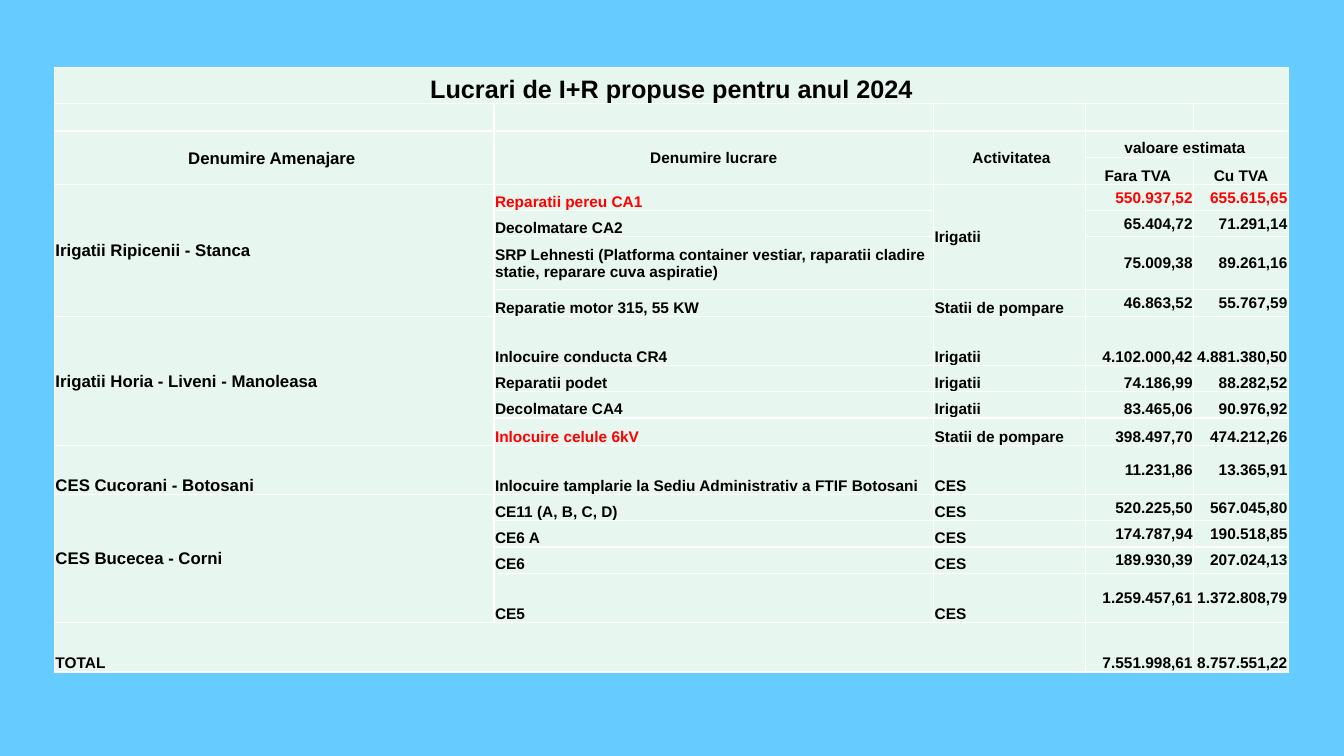
from lxml.etree import SubElement
from pptx import Presentation
from pptx.dml.color import RGBColor
from pptx.enum.text import MSO_ANCHOR as Anchor, PP_ALIGN as Align
from pptx.oxml.ns import qn
from pptx.util import Inches, Pt

SKY = RGBColor(0x66, 0xCC, 0xFF)
MINT = RGBColor(0xE7, 0xF6, 0xEF)
WHITE = RGBColor(0xFF, 0xFF, 0xFF)
BLACK = RGBColor(0, 0, 0)
RED = RGBColor(0xFF, 0, 0)
MID, LOW = Anchor.MIDDLE, Anchor.BOTTOM

TITLE = "Lucrari de I+R propuse pentru anul 2024"
# Heading: text, size
HEADS = [("Denumire Amenajare ", 12), ("Denumire lucrare", 11), (" Activitatea", 11)]
VALUE = "valoare estimata "
TAXES = ["Fara TVA ", "Cu TVA"]
# Site, anchor of its name, anchor of its values, works
SITES = [
    ("Irigatii Ripicenii - Stanca", MID, MID, [
        ("Reparatii pereu CA1", "Irigatii", "550.937,52", "655.615,65"),
        ("Decolmatare CA2", "", "65.404,72", "71.291,14"),
        ("SRP Lehnesti (Platforma container vestiar, raparatii cladire statie, "
         "reparare cuva aspiratie)", "", "75.009,38", "89.261,16"),
        ("Reparatie motor 315, 55 KW", "Statii de pompare", "46.863,52", "55.767,59")]),
    ("Irigatii Horia - Liveni - Manoleasa", MID, LOW, [
        ("Inlocuire conducta CR4", "Irigatii", "4.102.000,42", "4.881.380,50"),
        ("Reparatii podet", "Irigatii", "74.186,99", "88.282,52"),
        ("Decolmatare CA4", "Irigatii", "83.465,06", "90.976,92"),
        ("Inlocuire celule 6kV", "Statii de pompare", "398.497,70", "474.212,26")]),
    ("CES Cucorani - Botosani", LOW, MID, [
        ("Inlocuire tamplarie la Sediu Administrativ a FTIF Botosani", "CES",
         "11.231,86", "13.365,91")]),
    ("CES Bucecea - Corni", MID, MID, [
        ("CE11 (A, B, C, D)", "CES", "520.225,50", "567.045,80"),
        ("CE6 A", "CES", "174.787,94", "190.518,85"),
        ("CE6", "CES", "189.930,39", "207.024,13"),
        ("CE5", "CES", "1.259.457,61", "1.372.808,79")]),
]
TOTAL = ("TOTAL", "7.551.998,61", "8.757.551,22")
REDS = {"Reparatii pereu CA1", "550.937,52", "655.615,65", "Inlocuire celule 6kV"}
COLS = [4.36, 4.36, 1.51, 1.07, 0.94]
ROWS = [0.36, 0.27, 0.26, 0.27, 0.26, 0.26, 0.52, 0.27, 0.49,
        0.26, 0.26, 0.27, 0.49, 0.26, 0.26, 0.26, 0.49, 0.49]

deck = Presentation()
deck.slide_width, deck.slide_height = Inches(13.33), Inches(7.5)
slide = deck.slides.add_slide(deck.slide_layouts[6])
slide.background.fill.solid()
slide.background.fill.fore_color.rgb = SKY

table = slide.shapes.add_table(len(ROWS), len(COLS), Inches(0.54), Inches(0.67),
                               Inches(sum(COLS)), Inches(sum(ROWS))).table
table.first_row = table.horz_banding = False
for col, width in zip(table.columns, COLS):
    col.width = Inches(width)
for row, height in zip(table.rows, ROWS):
    row.height = Inches(height)


def style(cell):
    """Give a cell its white borders, fill, margins and a small blank line."""
    props = cell._tc.get_or_add_tcPr()
    for side in ("lnL", "lnR", "lnT", "lnB"):
        line = SubElement(props, qn(f"a:{side}"), w=str(Pt(1)))
        SubElement(SubElement(line, qn("a:solidFill")), qn("a:srgbClr"), val=str(WHITE))
    cell.fill.solid()
    cell.fill.fore_color.rgb = MINT
    cell.margin_left = cell.margin_right = cell.margin_top = Inches(0.01)
    cell.margin_bottom = 0
    SubElement(cell.text_frame.paragraphs[0]._p, qn("a:endParaRPr"), sz="1100")


def put(row, col, text, size=11, align=Align.LEFT, anchor=LOW, span=(1, 1)):
    cell = table.cell(row, col)
    if span != (1, 1):
        cell.merge(table.cell(row + span[0] - 1, col + span[1] - 1))
    cell.vertical_anchor = anchor
    para = cell.text_frame.paragraphs[0]
    para.alignment = align
    run = para.add_run()
    run.text = text
    font = run.font
    font.name, font.size, font.bold = "Arial", Pt(size), True
    font.color.rgb = RED if text in REDS else BLACK


for cell in table.iter_cells():
    style(cell)

put(0, 0, TITLE, size=18, align=Align.CENTER, span=(1, 5))
for col, (text, size) in enumerate(HEADS):
    put(2, col, text, size=size, align=Align.CENTER, anchor=MID, span=(2, 1))
put(2, 3, VALUE, align=Align.CENTER, span=(1, 2))
for col, text in enumerate(TAXES, 3):
    put(3, col, text, align=Align.CENTER)

top = 4
for site, hold, level, works in SITES:
    put(top, 0, site, size=12, anchor=hold, span=(len(works), 1))
    for row, (work, kind, *sums) in enumerate(works, top):
        put(row, 1, work, anchor=MID if work.startswith("SRP") else LOW)
        if kind:
            # A kind also covers the rows below it that leave theirs empty
            deep = 1
            while row + deep < top + len(works) and not works[row + deep - top][1]:
                deep += 1
            put(row, 2, kind, anchor=MID if deep > 1 else LOW, span=(deep, 1))
        for col, value in enumerate(sums, 3):
            put(row, col, value, align=Align.RIGHT, anchor=level)
    top += len(works)

put(top, 0, TOTAL[0], span=(1, 3))
for col, value in enumerate(TOTAL[1:], 3):
    put(top, col, value, align=Align.RIGHT)

deck.save("out.pptx")
